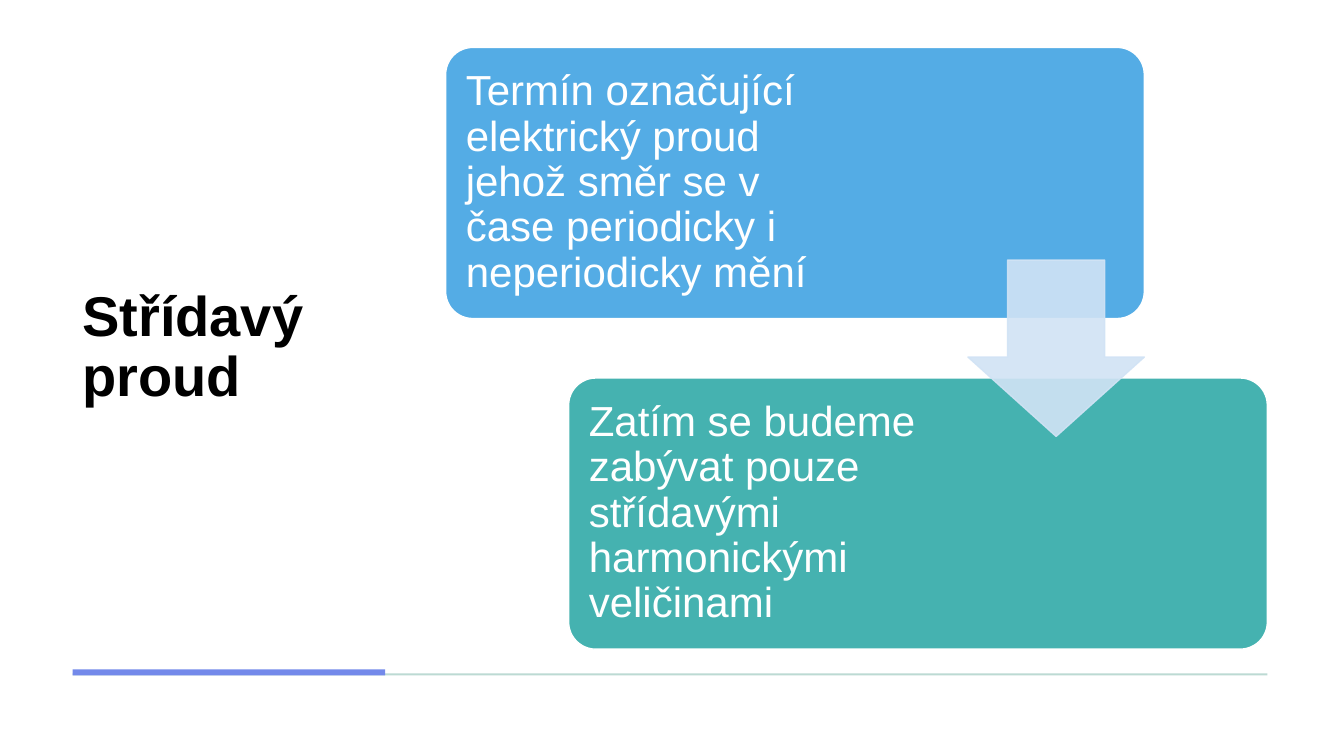
import pptx
import pptx.util
import pptx.dml.color
import pptx.enum.shapes
import pptx.enum.text
import pptx.oxml.ns
from dataclasses import dataclass
from lxml import etree

Inches = pptx.util.Inches
Kind = pptx.enum.shapes.MSO_SHAPE


@dataclass(frozen=True)
class Theme:
    font: str = "Arial"
    head: int = 40
    body: int = 30
    black: str = "000000"
    white: str = "FFFFFF"
    blue: str = "54ACE5"
    teal: str = "45B2B0"
    pale: str = "D1E3F5"
    rule: str = "BCDAD3"
    accent: str = "7389EA"


THEME = Theme()


def rgb(color):
    return pptx.dml.color.RGBColor.from_string(color)


def add_shape(slide, kind, box, fill, line=None, adjust=()):
    shape = slide.shapes.add_shape(kind, *map(Inches, box))
    shape.shadow.inherit = False
    shape.fill.solid()
    shape.fill.fore_color.rgb = rgb(fill)
    if line:
        shape.line.color.rgb = rgb(line)
        shape.line.width = pptx.util.Pt(1)
    else:
        shape.line.fill.background()
    for i, value in enumerate(adjust):
        shape.adjustments[i] = value
    return shape


def add_text(slide, box, text, size, color, inset=(0.1, 0.05), bold=False):
    frame = slide.shapes.add_textbox(*map(Inches, box)).text_frame
    frame.word_wrap = True
    frame.vertical_anchor = pptx.enum.text.MSO_ANCHOR.MIDDLE
    frame.margin_left = frame.margin_right = Inches(inset[0])
    frame.margin_top = frame.margin_bottom = Inches(inset[1])
    frame.text = text
    para = frame.paragraphs[0]
    para.line_spacing = 0.9
    font = para.runs[0].font
    font.name, font.size, font.bold = THEME.font, pptx.util.Pt(size), bold
    font.color.rgb = rgb(color)


def add_card(slide, left, top, width, text, fill):
    add_shape(slide, Kind.ROUNDED_RECTANGLE, (left, top, 6.93, 2.69),
              fill, THEME.white, (0.1,))
    pad = 0.08
    add_text(slide, (left + pad, top + pad, width, 2.53), text,
             THEME.body, THEME.white, (0.12, 0.12))


def add_arrow(slide, box):
    arrow = add_shape(slide, Kind.DOWN_ARROW, box, THEME.pale, THEME.pale)
    # The preset lists its head length first, then its shaft width
    arrow.adjustments[0], arrow.adjustments[1] = 0.55, 0.45
    # Fill and outline are both 90 % opaque
    qn = pptx.oxml.ns.qn
    for color in arrow.element.spPr.iter(qn("a:srgbClr")):
        etree.SubElement(color, qn("a:alpha")).set("val", "90000")


def main():
    deck = pptx.Presentation()
    deck.slide_width, deck.slide_height = Inches(13.33), Inches(7.5)
    slide = deck.slides.add_slide(deck.slide_layouts[6])

    # Title
    add_text(slide, (0.72, 0.47, 3.1, 5.97), "Střídavý proud",
             THEME.head, THEME.black, bold=True)

    # Footer rule with accent bar
    add_shape(slide, Kind.RECTANGLE, (0.72, 6.68, 11.85, 0.02), THEME.rule)
    add_shape(slide, Kind.RECTANGLE, (0.72, 6.64, 3.1, 0.06), THEME.accent)

    # Two steps and the arrow between them
    add_card(slide, 4.42, 0.47, 4.15,
             "Termín označující elektrický proud jehož směr se v čase "
             "periodicky i neperiodicky mění", THEME.blue)
    add_card(slide, 5.64, 3.75, 3.8,
             "Zatím se budeme zabývat pouze střídavými harmonickými "
             "veličinami", THEME.teal)
    add_arrow(slide, (9.6, 2.58, 1.75, 1.75))

    deck.save("out.pptx")


if __name__ == "__main__":
    main()
